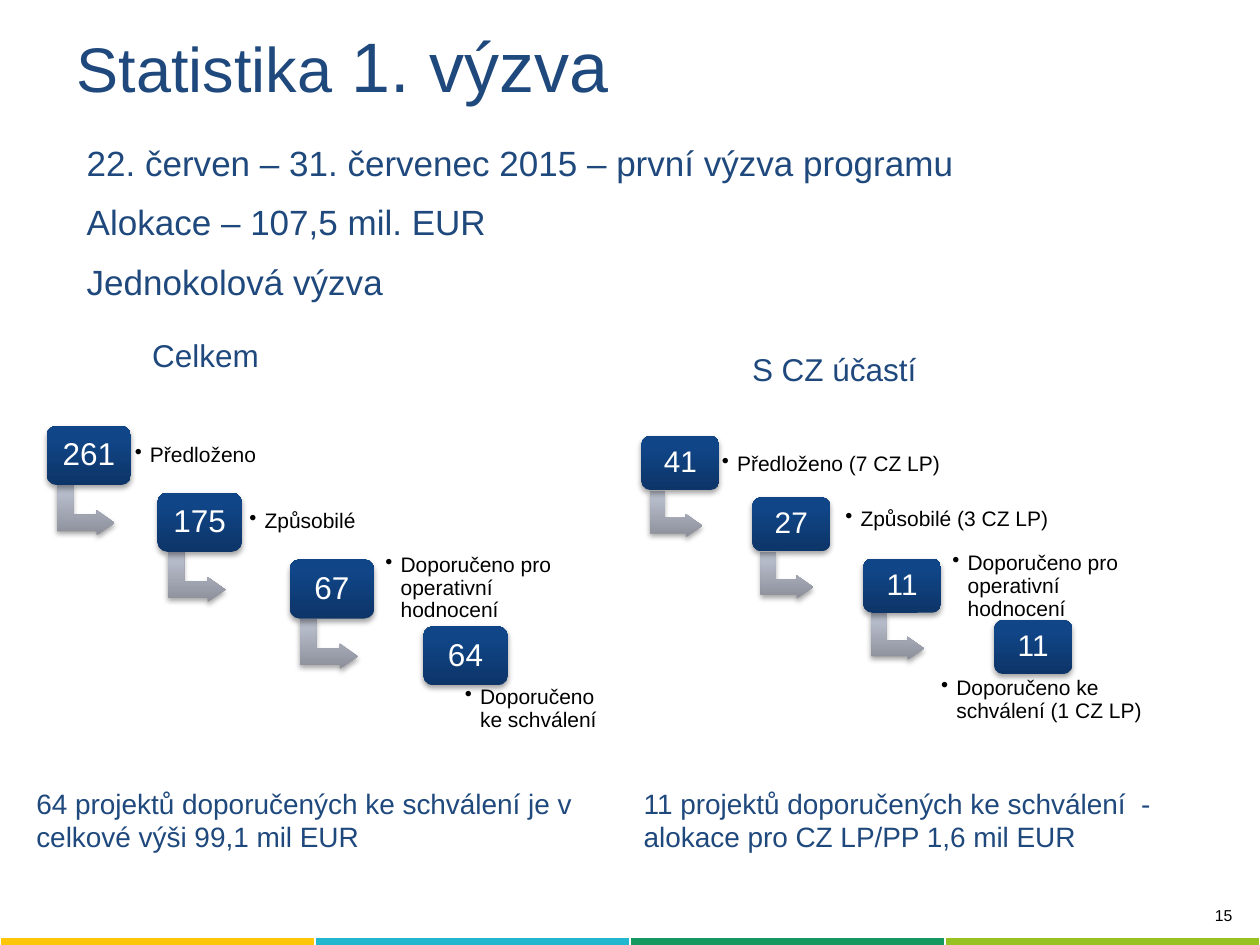
import lxml.etree
import pptx
import pptx.dml.color
import pptx.enum.shapes
import pptx.enum.text
import pptx.oxml
import pptx.oxml.ns
import pptx.util
from pptx.util import Inches

COLORS = {"navy": "1F497D", "black": "000000", "white": "FFFFFF"}
STRIPES = ["FDC609", "21B7CF", "159960", "98C222"]
GRADIENTS = {
    "box": [(0, "0D3568"), (80, "104587"), (100, "0E458A")],
    "arrow": [(0, "8C8F9A"), (80, "B5BAC8"), (100, "B6BBC9")],
}
ALIGN = pptx.enum.text.PP_ALIGN
ANCHOR = pptx.enum.text.MSO_ANCHOR
SHAPE = pptx.enum.shapes.MSO_SHAPE
qn = pptx.oxml.ns.qn


def write(shape, lines, size=18, color="navy", align=ALIGN.LEFT, anchor=ANCHOR.TOP,
          inset=None, wrap=True, gap=0, spacing=None, bullet=False):
    """Fill a shape with lines; each line is a string or a list of (text, size)."""
    frame = shape.text_frame
    frame.word_wrap = wrap
    frame.vertical_anchor = anchor
    if inset is not None:
        frame.margin_left = frame.margin_right = Inches(inset)
        frame.margin_top = frame.margin_bottom = Inches(inset)
    for number, line in enumerate(lines):
        para = frame.add_paragraph() if number else frame.paragraphs[0]
        para.alignment = align
        if number:
            para.space_before = pptx.util.Pt(gap)
        if spacing:
            para.line_spacing = spacing
        if bullet:
            props = para._p.get_or_add_pPr()
            props.set("marL", str(Inches(0.12)))
            props.set("indent", str(-Inches(0.12)))
            lxml.etree.SubElement(props, qn("a:buChar")).set("char", "•")
        for text, points in [(line, size)] if isinstance(line, str) else line:
            span = para.add_run()
            span.text = text
            span.font.name = "Arial"
            span.font.size = pptx.util.Pt(points)
            span.font.color.rgb = pptx.dml.color.RGBColor.from_string(COLORS[color])


def shade(shape, stops):
    """Give a shape an upright gradient, no line and a soft shadow below."""
    shape.line.fill.background()
    space = 'xmlns:a="http://schemas.openxmlformats.org/drawingml/2006/main"'
    marks = "".join(f'<a:gs pos="{place * 1000}"><a:srgbClr val="{color}"/></a:gs>'
                    for place, color in stops)
    gradient = pptx.oxml.parse_xml(
        f'<a:gradFill {space} rotWithShape="0"><a:gsLst>{marks}</a:gsLst>'
        '<a:lin ang="16200000" scaled="0"/></a:gradFill>')
    effects = pptx.oxml.parse_xml(
        f'<a:effectLst {space}><a:outerShdw blurRad="{pptx.util.Pt(3.1)}" '
        f'dist="{pptx.util.Pt(1.8)}" dir="5400000" rotWithShape="0">'
        '<a:srgbClr val="000000"><a:alpha val="35000"/></a:srgbClr>'
        '</a:outerShdw></a:effectLst>')
    props = shape._element.spPr
    props.find(qn("a:prstGeom")).addnext(gradient)
    props.find(qn("a:ln")).addnext(effects)


deck = pptx.Presentation()
deck.slide_width, deck.slide_height = Inches(10), Inches(7.5)
page = deck.slides.add_slide(deck.slide_layouts[5])

# Colour stripe along the bottom edge
stripe = page.shapes.add_table(1, 4, Inches(0), Inches(7.44), Inches(10), Inches(0.17)).table
for cell, color in zip(stripe.rows[0].cells, STRIPES):
    cell.fill.solid()
    cell.fill.fore_color.rgb = pptx.dml.color.RGBColor.from_string(color)
    cell.margin_top = cell.margin_bottom = 0

# Title
title = page.shapes.title
title.left, title.top = Inches(0.51), Inches(0.21)
title.width, title.height = Inches(8.5), Inches(0.61)
write(title, [[("Statistika", 36), (" 1. výzva", 40)]], anchor=ANCHOR.MIDDLE)
title.text_frame.auto_size = pptx.enum.text.MSO_AUTO_SIZE.NONE

# Plain texts: left, top, width, height, lines, format
intro = ["22. červen – 31. červenec 2015 – první výzva programu",
         "Alokace – 107,5 mil. EUR", "Jednokolová výzva"]
texts = [
    (0.59, 1.07, 8.5, 1.68, intro, {"size": 20, "gap": 10}),
    (1.11, 2.62, 1.06, 0.4, ["Celkem"], {"wrap": False}),
    (5.87, 2.73, 1.59, 0.4, ["S CZ účastí"], {"wrap": False}),
    (0.19, 6.19, 4.66, 0.64,
     ["64 projektů doporučených ke schválení je v celkové výši 99,1 mil EUR"], {"size": 16}),
    (5.01, 6.19, 4.66, 0.64,
     ["11 projektů doporučených ke schválení  - alokace pro CZ LP/PP 1,6 mil EUR"],
     {"size": 16}),
    (7.91, 7.14, 1.97, 0.31, ["15"], {"size": 9, "color": "black", "align": ALIGN.RIGHT}),
]
for left, top, width, height, lines, look in texts:
    box = page.shapes.add_textbox(Inches(left), Inches(top), Inches(width), Inches(height))
    write(box, lines, **look)

# Step-down diagrams; a step is: box left, number, label, label left, top, width
diagrams = [
    {"top": 3.38, "pitch": 0.53, "box": (0.67, 0.47), "arrow": (0.4, 0.46),
     "shift": (0.11, 0.44), "size": 18, "label": 0.38, "steps": [
         (0.37, "261", "Předloženo", 1.02, 3.43, 2.19),
         (1.25, "175", "Způsobilé", 1.93, 3.95, 1.52),
         (2.3, "67", "Doporučeno pro operativní hodnocení", 3.01, 4.48, 1.7),
         (3.36, "64", "Doporučeno ke schválení", 3.64, 5.44, 1.28)]},
    {"top": 3.46, "pitch": 0.487, "box": (0.62, 0.43), "arrow": (0.37, 0.42),
     "shift": (0.09, 0.41), "size": 17, "label": 0.35, "steps": [
         (5.09, "41", "Předloženo (7 CZ LP)", 5.68, 3.51, 2.01),
         (5.97, "27", "Způsobilé (3 CZ LP)", 6.66, 3.95, 1.84),
         (6.85, "11", "Doporučeno pro operativní hodnocení", 7.51, 4.48, 1.56),
         (7.89, "11", "Doporučeno ke schválení (1 CZ LP)", 7.42, 5.38, 1.82)]},
]
for diagram in diagrams:
    group = page.shapes.add_group_shape().shapes
    box_width, box_height = map(Inches, diagram["box"])
    arrow_width, arrow_height = map(Inches, diagram["arrow"])
    shift_x, shift_y = map(Inches, diagram["shift"])
    last = len(diagram["steps"]) - 1
    for index, (left, number, label, label_left, label_top, label_width) in enumerate(
            diagram["steps"]):
        left, top = Inches(left), Inches(diagram["top"] + index * diagram["pitch"])
        if index < last:
            arrow = group.add_shape(SHAPE.BENT_UP_ARROW, left + shift_x, top + shift_y,
                                    arrow_width, arrow_height)
            arrow.rotation = 90
            for place, value in enumerate((0.328, 0.25, 0.358)):
                arrow.adjustments[place] = value
            shade(arrow, GRADIENTS["arrow"])
        box = group.add_shape(SHAPE.ROUNDED_RECTANGLE, left, top, box_width, box_height)
        shade(box, GRADIENTS["box"])
        write(box, [number], size=diagram["size"], color="white", align=ALIGN.CENTER,
              anchor=ANCHOR.MIDDLE, inset=0.07, spacing=0.9)
        note = group.add_textbox(Inches(label_left), Inches(label_top), Inches(label_width),
                                 Inches(diagram["label"]))
        write(note, [label], size=12, color="black", anchor=ANCHOR.MIDDLE, inset=0.05,
              spacing=0.9, bullet=True)

deck.save("out.pptx")
